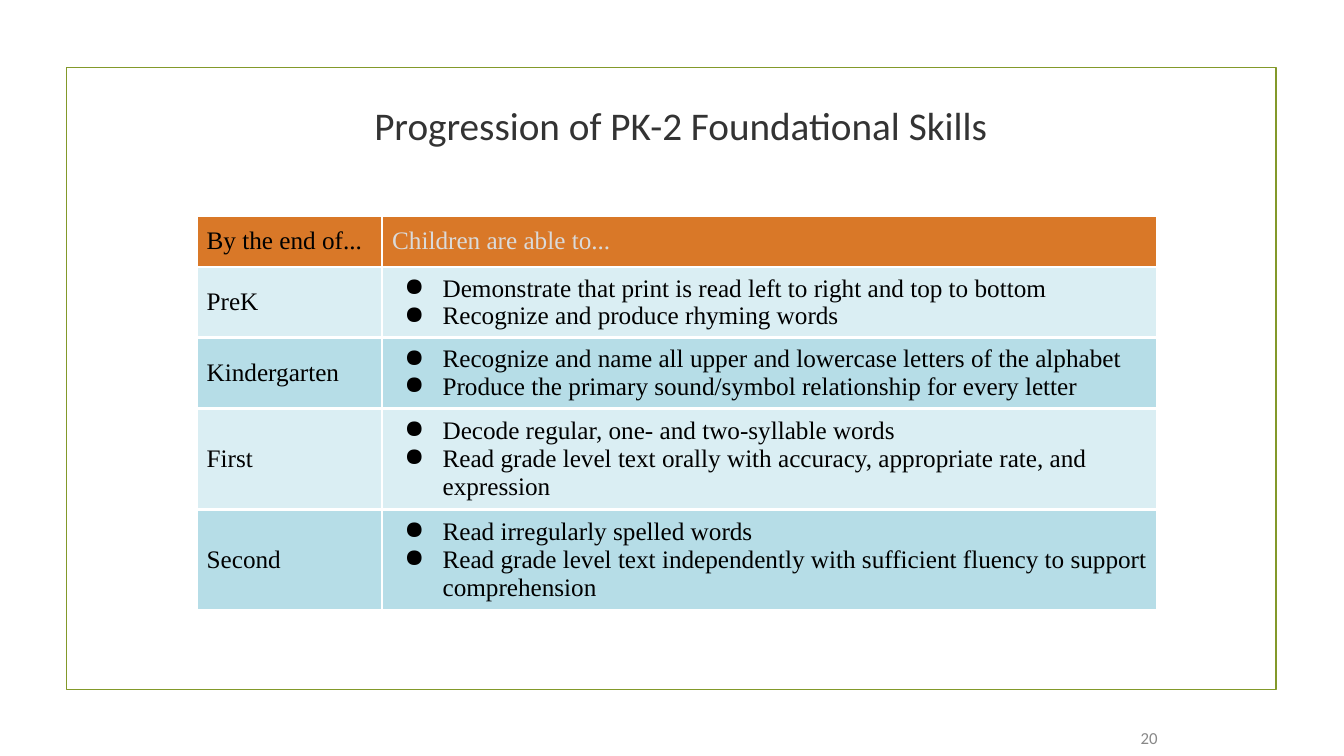
import dataclasses

import lxml.etree
import pptx
import pptx.dml.color
import pptx.enum.shapes
import pptx.enum.text
import pptx.oxml.ns
import pptx.util

Inches = pptx.util.Inches
Pt = pptx.util.Pt
RGBColor = pptx.dml.color.RGBColor
PP_ALIGN = pptx.enum.text.PP_ALIGN
MIDDLE = pptx.enum.text.MSO_ANCHOR.MIDDLE
qn = pptx.oxml.ns.qn

BLACK = RGBColor(0x00, 0x00, 0x00)
WHITE = RGBColor(0xFF, 0xFF, 0xFF)
OLIVE = RGBColor(0x83, 0x99, 0x2A)
CHARCOAL = RGBColor(0x33, 0x33, 0x33)
GRAY = RGBColor(0x88, 0x88, 0x88)
SILVER = RGBColor(0xDA, 0xDA, 0xDA)
ORANGE = RGBColor(0xD9, 0x78, 0x28)
BANDS = (RGBColor(0xDA, 0xEE, 0xF3), RGBColor(0xB6, 0xDD, 0xE7))

TITLE_FONT = {"name": "Calibri", "size": Pt(28), "color": CHARCOAL}
NUMBER_FONT = {"name": "Calibri", "size": Pt(12), "color": GRAY}
BODY_FONT = {"name": "Times New Roman", "size": Pt(18), "color": BLACK}
HEADER_FONT = {**BODY_FONT, "color": SILVER}

COLUMN_WIDTHS = (1.84, 7.69)


@dataclasses.dataclass
class Grade:
    name: str
    skills: list[str]
    height: float


HEADER_HEIGHT = 0.51
GRADES = [
    Grade("PreK", [
        "Demonstrate that print is read left to right and top to bottom",
        "Recognize and produce rhyming words",
    ], 0.7),
    Grade("Kindergarten", [
        "Recognize and name all upper and lowercase letters of the alphabet",
        "Produce the primary sound/symbol relationship for every letter",
    ], 0.7),
    Grade("First", [
        "Decode regular, one- and two-syllable words",
        "Read grade level text orally with accuracy, appropriate rate, and expression",
    ], 0.93),
    Grade("Second", [
        "Read irregularly spelled words",
        "Read grade level text independently with sufficient fluency to support comprehension",
    ], 0.93),
]


def add_text(p, text: str, fmt: dict) -> None:
    r = p.add_run()
    r.text = text
    for key, value in fmt.items():
        if key == "color":
            r.font.color.rgb = value
        else:
            setattr(r.font, key, value)


def place(sp, left: float, top: float, width: float, height: float) -> None:
    box = {"left": left, "top": top, "width": width, "height": height}
    for key, value in box.items():
        setattr(sp, key, Inches(value))


def fill_frame(sp, text: str, align, fmt: dict) -> None:
    tf = sp.text_frame
    tf.word_wrap = True
    tf.vertical_anchor = MIDDLE
    p = tf.paragraphs[0]
    p.alignment = align
    add_text(p, text, fmt)


def add_bullet(p) -> None:
    pPr = p._p.get_or_add_pPr()
    pPr.set("marL", str(Inches(0.5)))
    pPr.set("indent", str(Inches(-0.38)))
    color = lxml.etree.SubElement(pPr, qn("a:buClr"))
    lxml.etree.SubElement(color, qn("a:srgbClr"), val=str(BLACK))
    lxml.etree.SubElement(pPr, qn("a:buChar"), char="●")


def add_borders(cell) -> None:
    tcPr = cell._tc.get_or_add_tcPr()
    for side in ("lnL", "lnR", "lnT", "lnB"):
        ln = lxml.etree.SubElement(tcPr, qn(f"a:{side}"), w=str(Pt(2.25)))
        fill = lxml.etree.SubElement(ln, qn("a:solidFill"))
        lxml.etree.SubElement(fill, qn("a:srgbClr"), val=str(WHITE))


def fill_cell(cell, lines: list[str], fill: RGBColor, fmt: dict, bulleted: bool = False) -> None:
    add_borders(cell)
    cell.fill.solid()
    cell.fill.fore_color.rgb = fill
    cell.vertical_anchor = MIDDLE
    tf = cell.text_frame
    for i, line in enumerate(lines):
        p = tf.add_paragraph() if i else tf.paragraphs[0]
        if bulleted:
            add_bullet(p)
        add_text(p, line, fmt)


def add_skills_table(s) -> None:
    heights = [HEADER_HEIGHT] + [grade.height for grade in GRADES]
    table = s.shapes.add_table(
        len(heights), len(COLUMN_WIDTHS), Inches(1.95), Inches(2.14),
        Inches(sum(COLUMN_WIDTHS)), Inches(sum(heights)),
    ).table
    for column, width in zip(table.columns, COLUMN_WIDTHS):
        column.width = Inches(width)
    for row, height in zip(table.rows, heights):
        row.height = Inches(height)

    fill_cell(table.cell(0, 0), ["By the end of..."], ORANGE, BODY_FONT)
    fill_cell(table.cell(0, 1), ["Children are able to..."], ORANGE, HEADER_FONT)
    for i, grade in enumerate(GRADES):
        band = BANDS[i % len(BANDS)]
        fill_cell(table.cell(i + 1, 0), [grade.name], band, BODY_FONT)
        fill_cell(table.cell(i + 1, 1), grade.skills, band, BODY_FONT, bulleted=True)


def main() -> None:
    prs = pptx.Presentation()
    prs.slide_width = Inches(13.33)
    prs.slide_height = Inches(7.5)
    s = prs.slides.add_slide(prs.slide_layouts[5])

    frame = s.shapes.add_shape(
        pptx.enum.shapes.MSO_SHAPE.RECTANGLE,
        Inches(0.66), Inches(0.67), Inches(12), Inches(6.17),
    )
    frame.shadow.inherit = False
    frame.fill.background()
    frame.line.color.rgb = OLIVE
    frame.line.width = Pt(1.25)

    number = s.shapes.add_textbox(Inches(9.25), Inches(7.13), Inches(2.33), Inches(0.37))
    fill_frame(number, "20", PP_ALIGN.RIGHT, NUMBER_FONT)

    title = s.shapes.title
    place(title, 1.75, 0.7, 10, 1.08)
    fill_frame(title, "Progression of PK-2 Foundational Skills", PP_ALIGN.CENTER, TITLE_FONT)

    add_skills_table(s)
    prs.save("out.pptx")


if __name__ == "__main__":
    main()
